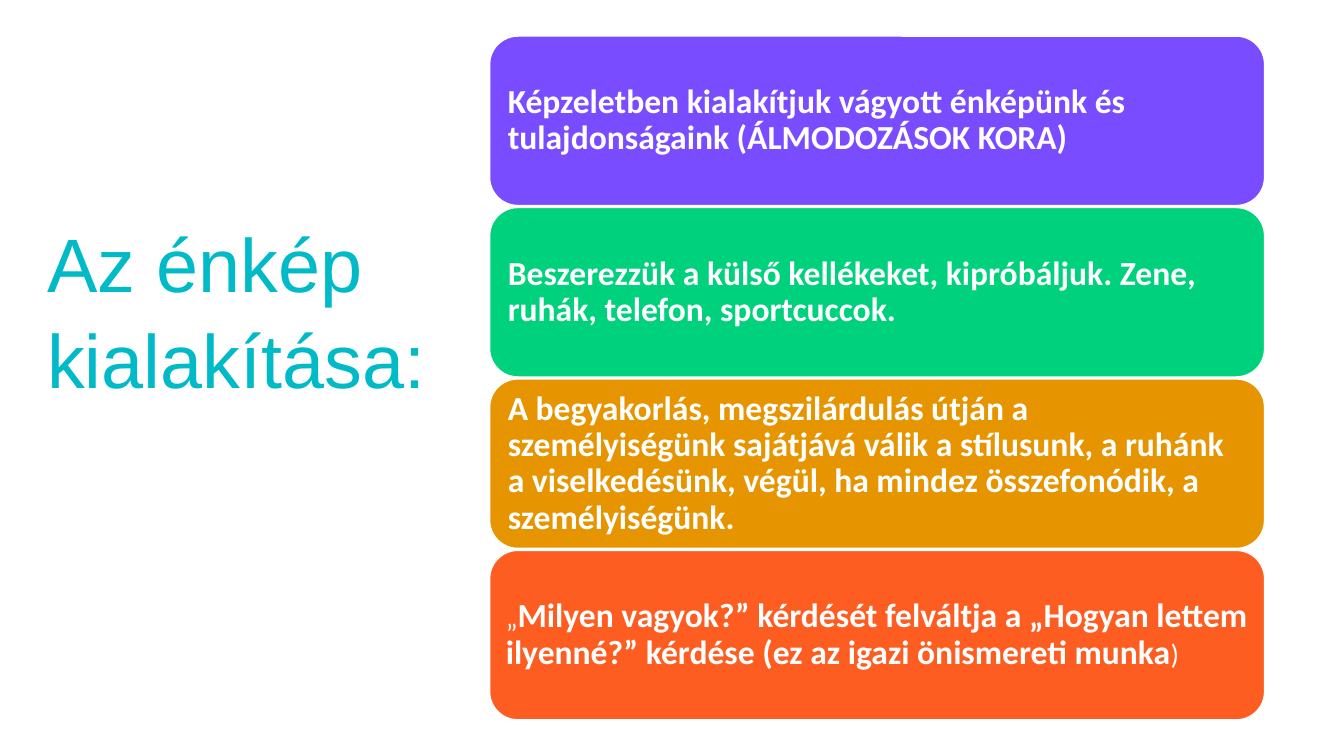
from dataclasses import dataclass

from pptx import Presentation
from pptx.dml.color import RGBColor as Rgb
from pptx.enum.shapes import MSO_SHAPE as Form
from pptx.enum.text import MSO_ANCHOR as Anchor, PP_ALIGN as Align
from pptx.util import Cm, Pt


@dataclass
class Theme:
    white: str = "FFFFFF"
    title: str = "00BAC8"
    cards: tuple = ("794DFF", "00D17D", "E69500", "FE5D21")
    head: int = 54
    body: int = 24
    small: int = 20


def style(run, font, size, color, bold=False):
    run.font.name = font
    run.font.size = Pt(size)
    run.font.bold = bold
    run.font.color.rgb = Rgb.from_string(color)


theme = Theme()
deck = Presentation()
deck.slide_width, deck.slide_height = Cm(33.87), Cm(19.05)
slide = deck.slides.add_slide(deck.slide_layouts[6])

title = slide.shapes.add_textbox(Cm(0.94), Cm(5.16), Cm(12.47), Cm(11.99))
frame = title.text_frame
frame.word_wrap = True
frame.margin_top = Cm(0.2)
frame.text = "Az énkép kialakítása:"
line = frame.paragraphs[0]
line.line_spacing = 1.05
style(line.runs[0], "Arial", theme.head, theme.title)

cards = [
    (0.25, ["Képzeletben kialakítjuk vágyott énképünk és tulajdonságaink (ÁLMODOZÁSOK KORA)"]),
    (0.25, ["Beszerezzük a külső kellékeket, kipróbáljuk. Zene, ruhák, telefon, sportcuccok."]),
    (0.25, ["A begyakorlás, megszilárdulás útján a személyiségünk sajátjává válik a stílusunk, "
            "a ruhánk a viselkedésünk, végül, ha mindez összefonódik, a személyiségünk."]),
    (0.2, ["„",
           "Milyen vagyok?” kérdését felváltja a „Hogyan lettem ilyenné?” kérdése "
           "(ez az igazi önismereti munka",
           ")"]),
]
left, top, width, height, step = 12.34, 0.91, 19.53, 4.27, 4.32

for row, (inset, parts) in enumerate(cards):
    card = slide.shapes.add_shape(
        Form.ROUNDED_RECTANGLE, Cm(left), Cm(top + row * step), Cm(width), Cm(height))
    card.shadow.inherit = False
    card.fill.solid()
    card.fill.fore_color.rgb = Rgb.from_string(theme.cards[row])
    card.line.color.rgb = Rgb.from_string(theme.white)
    card.line.width = Pt(1)
    frame = card.text_frame
    frame.word_wrap = True
    frame.vertical_anchor = Anchor.MIDDLE
    frame.margin_left = frame.margin_right = Cm(inset)
    frame.margin_top = frame.margin_bottom = Cm(inset)
    line = frame.paragraphs[0]
    line.alignment = Align.LEFT
    line.line_spacing = 0.9
    for part in parts:
        run = line.add_run()
        run.text = part
        bold = len(part) > 1
        style(run, "Calibri", theme.body if bold else theme.small, theme.white, bold)

deck.save("out.pptx")
